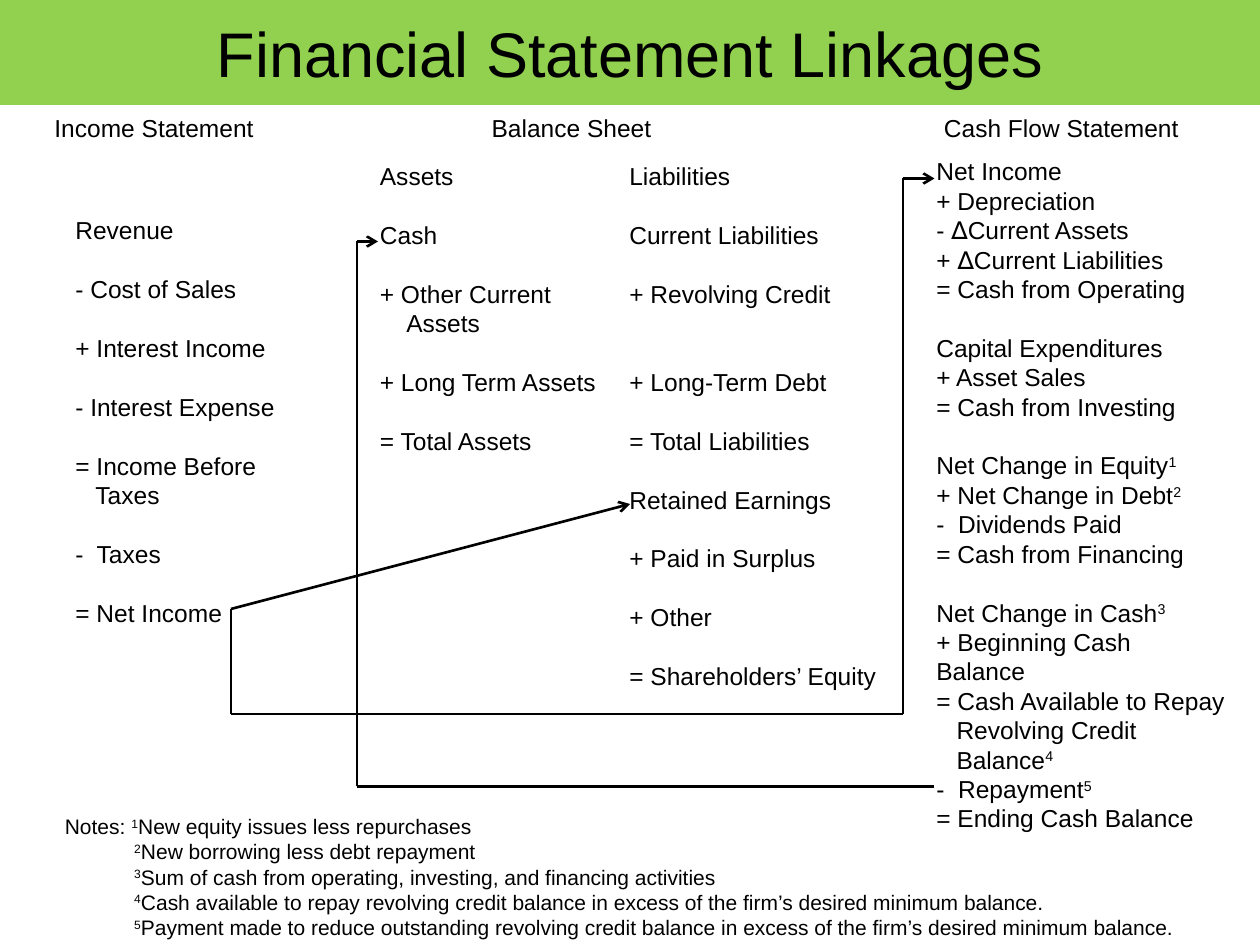
import itertools
import pptx
import pptx.util
import pptx.oxml
import pptx.oxml.ns
import pptx.dml.color
import pptx.enum.shapes
import pptx.enum.text

THEME = {
    "band": "92D050", "ink": "000000",
    "font": "Arial", "symbol_font": "Lato",
    "title": 36, "body": 14, "notes": 12,
    "leading": 1.2, "line": 1.5,
}

# Content: each text is a list of groups, each group a list of rows.
# A row is a tuple of runs; a digit alone is a superscript, "∆" uses the symbol
# font, and a leading number is the row's left indent in inches.
TITLE = "Financial Statement Linkages"
HEADINGS = [[("Income Statement\tBalance Sheet\tCash Flow Statement",)]]
INCOME = [
    [("Revenue",)],
    [("- Cost of Sales",)],
    [("+ Interest Income",)],
    [("- Interest Expense",)],
    [("= Income Before",), (0.16, "Taxes")],
    [("-  Taxes",)],
    [("= Net Income",)],
]
BALANCE = [
    [("Assets\tLiabilities",)],
    [("Cash\tCurrent Liabilities",)],
    [("+ Other Current\t+ Revolving Credit",), (0.21, "Assets")],
    [("+ Long Term Assets\t+ Long-Term Debt",)],
    [("= Total Assets\t= Total Liabilities",)],
    [("\tRetained Earnings",)],
    [("\t+ Paid in Surplus",)],
    [("\t+ Other",)],
    [("\t= Shareholders’ Equity",)],
]
CASH_FLOW = [
    [("Net Income",), ("+ Depreciation",), ("- ", "∆", "Current Assets"),
     ("+ ", "∆", "Current Liabilities"), ("= Cash from Operating",)],
    [("Capital Expenditures",), ("+ Asset Sales",), ("= Cash from Investing",)],
    [("Net Change in Equity", "1"), ("+ Net Change in Debt", "2"),
     ("-  Dividends Paid",), ("= Cash from Financing",)],
    [("Net Change in Cash", "3"), ("+ Beginning Cash Balance",),
     ("= Cash Available to Repay",), (0.16, "Revolving Credit"),
     (0.16, "Balance", "4"), ("-  Repayment", "5"), ("= Ending Cash Balance",)],
]
NOTES = [[
    ("Notes: ", "1", "New equity issues less repurchases"),
    (0.55, "2", "New borrowing less debt repayment"),
    (0.55, "3", "Sum of cash from operating, investing, and financing activities"),
    (0.55, "4", "Cash available to repay revolving credit balance in excess of "
                "the firm’s desired minimum balance."),
    (0.55, "5", "Payment made to reduce outstanding revolving credit balance in "
                "excess of the firm’s desired minimum balance."),
]]

# Grid of 120 columns by 90 rows: left, top, width, height
COLUMNS, ROWS = 120, 90
# groups, place, type size, tab stops in inches, rows left free at the top
TEXTS = [
    (HEADINGS, (4, 10.2, 113, 4), "body", (3.47, 7.06), 0),
    (INCOME, (6, 14.3, 24, 46.4), "body", (), 2),
    (BALANCE, (35, 14.75, 50, 52), "body", (1.98,), 0),
    (CASH_FLOW, (88, 14.3, 30, 63.4), "body", (), 0),
    (NOTES, (5, 76.9, 110, 13.3), "notes", (), 0),
]
# Each link runs through its points and ends in an arrowhead
NET_INCOME = (22, 58)
LINKS = [
    [NET_INCOME, (60, 48)],
    [NET_INCOME, (22, 68), (86, 68), (86, 17), (89, 17)],
    [(89, 74.9), (34, 74.9), (34, 23), (36, 23)],
]

deck = pptx.Presentation()
deck.slide_width = pptx.util.Inches(10)
deck.slide_height = pptx.util.Inches(7.5)
slide = deck.slides.add_slide(deck.slide_layouts[6])


def on_grid(column, row):
    return (round(deck.slide_width * column / COLUMNS),
            round(deck.slide_height * row / ROWS))


def color(name):
    return pptx.dml.color.RGBColor.from_string(THEME[name])


def add_child(parent, tag, **attributes):
    child = pptx.oxml.parse_xml(f"<a:{tag} {pptx.oxml.ns.nsdecls('a')}/>")
    for key, value in attributes.items():
        child.set(key, str(value))
    parent.append(child)
    return child


def add_run(paragraph, words, size):
    run = paragraph.add_run()
    run.text = words
    run.font.size = pptx.util.Pt(THEME[size])
    run.font.name = THEME["symbol_font" if words == "∆" else "font"]
    run.font.color.rgb = color("ink")
    if words.isdigit():
        run.font._element.set("baseline", "30000")


def add_text(groups, place, size, tabs, free_rows):
    box = slide.shapes.add_textbox(*on_grid(*place[:2]), *on_grid(*place[2:]))
    frame = box.text_frame
    frame.word_wrap = True
    leading = pptx.util.Pt(THEME[size] * THEME["leading"])
    frame.margin_top += free_rows * leading
    paragraph = None
    for group in groups:
        for position, row in enumerate(group):
            first = paragraph is None
            paragraph = frame.paragraphs[0] if first else frame.add_paragraph()
            paragraph.line_spacing = leading
            if position == 0 and not first:
                paragraph.space_before = leading
            properties = paragraph._p.get_or_add_pPr()
            if not isinstance(row[0], str):
                properties.set("marL", str(pptx.util.Inches(row[0])))
                properties.set("indent", "0")
                row = row[1:]
            if tabs:
                stops = add_child(properties, "tabLst")
                for tab in tabs:
                    add_child(stops, "tab", pos=pptx.util.Inches(tab), algn="l")
            for words in row:
                add_run(paragraph, words, size)


def add_link(points):
    for start, end in itertools.pairwise(points):
        link = slide.shapes.add_connector(
            pptx.enum.shapes.MSO_CONNECTOR.STRAIGHT, *on_grid(*start), *on_grid(*end))
        link.line.color.rgb = color("ink")
        link.line.width = pptx.util.Pt(THEME["line"])
        add_child(link._element.spPr, "effectLst")
    add_child(link.line._get_or_add_ln(), "tailEnd", type="arrow")


# Title band
band = slide.shapes.add_shape(
    pptx.enum.shapes.MSO_SHAPE.RECTANGLE, 0, 0, *on_grid(COLUMNS, 10))
band.shadow.inherit = False
band.fill.solid()
band.fill.fore_color.rgb = color("band")
band.line.fill.background()
band.text_frame.vertical_anchor = pptx.enum.text.MSO_ANCHOR.MIDDLE
heading = band.text_frame.paragraphs[0]
heading.alignment = pptx.enum.text.PP_ALIGN.CENTER
add_run(heading, TITLE, "title")

# Statements and notes
for text in TEXTS:
    add_text(*text)

# Links between the statements
for points in LINKS:
    add_link(points)

deck.save("out.pptx")
